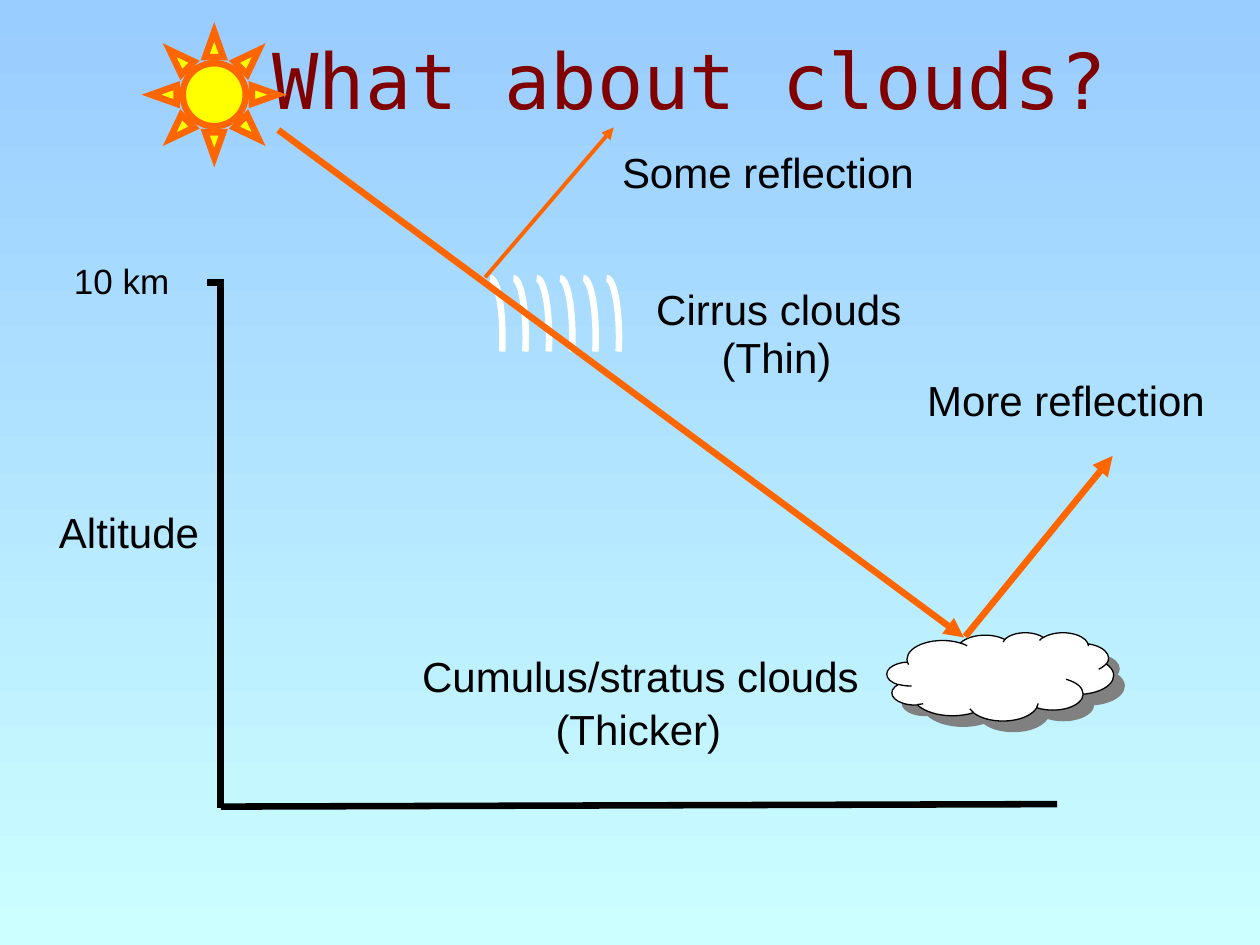
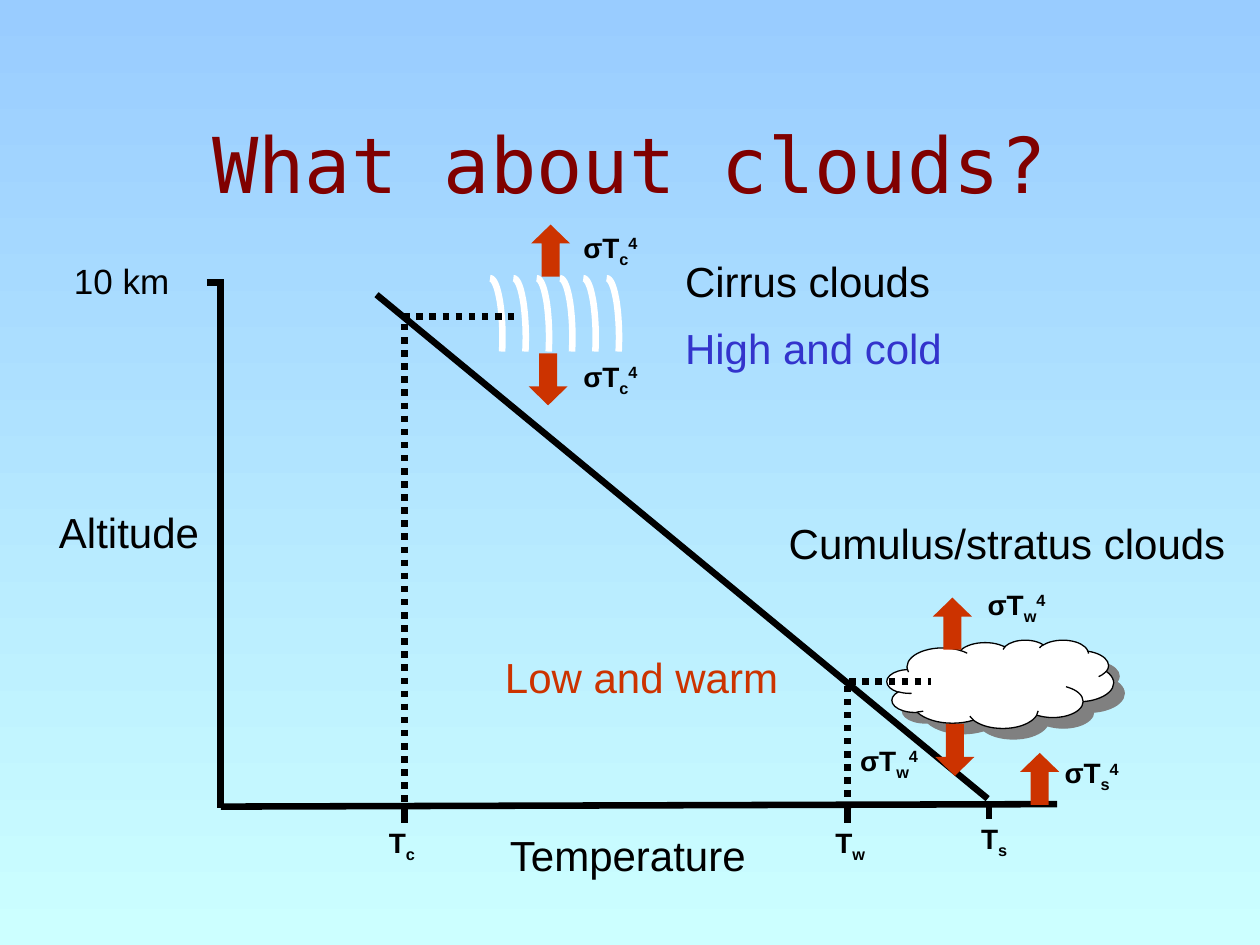
from math import cos, radians, sin

from lxml import etree
from pptx import Presentation
from pptx.dml.color import RGBColor
from pptx.enum.dml import MSO_LINE
from pptx.enum.shapes import MSO_CONNECTOR, MSO_SHAPE
from pptx.enum.text import MSO_ANCHOR, MSO_AUTO_SIZE, PP_ALIGN
from pptx.oxml.ns import qn
from pptx.util import Cm, Pt

SKY = RGBColor(0x99, 0xCC, 0xFF)
AQUA = RGBColor(0xCC, 0xFF, 0xFF)
BLACK = RGBColor(0, 0, 0)
WHITE = RGBColor(0xFF, 0xFF, 0xFF)
MAROON = RGBColor(0x80, 0, 0)
ORANGE = RGBColor(0xFF, 0x66, 0)
YELLOW = RGBColor(0xFF, 0xFF, 0)
RED = RGBColor(0xCC, 0x33, 0)
BLUE = RGBColor(0x33, 0x33, 0xCC)

DOTS = MSO_LINE.ROUND_DOT
LINE = MSO_CONNECTOR.STRAIGHT
CLOUD, SUN = MSO_SHAPE.CLOUD, MSO_SHAPE.SUN
UP, DOWN = MSO_SHAPE.UP_ARROW, MSO_SHAPE.DOWN_ARROW
MIDDLE, CENTER, LEFT = MSO_ANCHOR.MIDDLE, PP_ALIGN.CENTER, PP_ALIGN.LEFT
FIT, FIXED = MSO_AUTO_SIZE.SHAPE_TO_FIT_TEXT, MSO_AUTO_SIZE.NONE

TITLE = "What about clouds?"
THICK = 3.75

AXES = [(4.45, 5.72, 4.45, 16.28), (4.45, 16.26, 21.31, 16.21),
        (4.17, 5.69, 4.52, 5.69)]

NOTES = [
    ("Cumulus/stratus clouds", 8.26, 12.98, 9.32),
    ("Cirrus clouds", 12.98, 5.59, 5.46),
    ("(Thin)", 14.3, 6.55, 2.72),
    ("(Thicker)", 10.95, 14.05, 3.86),
    ("Some reflection", 12.29, 2.82, 6.4),
    ("More reflection", 18.44, 7.42, 6.12),
]
RAYS = [
    (5.61, 2.62, 19.43, 12.85, THICK),
    (9.78, 5.59, 12.37, 2.57, 2.25),
    (19.46, 12.83, 22.43, 9.19, THICK),
]

SLOPE = (19.91, 16.1, 7.59, 5.94)
GUIDES = [(17.12, 13.74, 18.77, 13.74), (17.09, 13.82, 17.09, 16.08),
          (8.13, 6.38, 10.36, 6.38), (8.15, 6.53, 8.15, 16.26)]
TICKS = [(19.94, 16.15), (17.09, 16.23), (8.15, 16.23)]
TEMPS = [("s", 19.53, 16.43, 1.1), ("w", 16.59, 16.51, 1.2),
         ("c", 7.59, 16.51, 1.1)]
ARROWS = [(UP, 20.73, 15.27), (UP, 18.97, 12.14), (UP, 10.87, 4.62),
          (DOWN, 19.02, 14.66), (DOWN, 10.82, 7.19)]
FLUXES = [("s", 21.21, 15.11, 1.65), ("w", 19.66, 11.71, 1.76),
          ("w", 17.09, 14.86, 1.76), ("c", 11.51, 4.52, 1.65),
          ("c", 11.51, 7.12, 1.65)]


def text(page, rows, x, y, w, h=1.27, size=24, font="Arial", color=BLACK,
         bold=False, align=LEFT, wrap=False, anchor=None, gap=0):
    box = page.shapes.add_textbox(Cm(x), Cm(y), Cm(w), Cm(h))
    frame = box.text_frame
    frame.word_wrap = wrap
    frame.auto_size = FIXED if wrap else FIT
    if anchor is not None:
        frame.vertical_anchor = anchor
    if isinstance(rows, str):
        rows = [[(rows, 0, color)]]
    for i, row in enumerate(rows):
        para = frame.add_paragraph() if i else frame.paragraphs[0]
        para.alignment = align
        para.space_before = Pt(gap if i else 0)
        for words, base, tint in row:
            run = para.add_run()
            run.text = words
            run.font.name = font
            run.font.size = Pt(size)
            run.font.bold = bold
            run.font.color.rgb = tint
            if base:
                run._r.get_or_add_rPr().set("baseline", str(base * 1000))


def line(page, x1, y1, x2, y2, width=THICK, color=BLACK, dash=None, head=False):
    rod = page.shapes.add_connector(LINE, Cm(x1), Cm(y1), Cm(x2), Cm(y2))
    rod.line.color.rgb = color
    rod.line.width = Pt(width)
    if dash:
        rod.line.dash_style = dash
    if head:
        etree.SubElement(rod.line._get_or_add_ln(), qn("a:tailEnd"), type="triangle")
    etree.SubElement(rod._element.spPr, qn("a:effectLst"))


def shape(page, kind, x, y, w, h, fill, edge, width=THICK, adjust=()):
    item = page.shapes.add_shape(kind, Cm(x), Cm(y), Cm(w), Cm(h))
    item.shadow.inherit = False
    item.fill.solid()
    item.fill.fore_color.rgb = fill
    item.line.color.rgb = edge
    item.line.width = Pt(width)
    etree.SubElement(item.line._get_or_add_ln(), qn("a:miter"), lim="800000")
    for i, value in enumerate(adjust):
        item.adjustments[i] = value
    return item


def cumulus(page, y):
    cloud = shape(page, CLOUD, 17.88, y, 4.57, 1.78, WHITE, BLACK, 0.75)
    effects = cloud._element.spPr.find(qn("a:effectLst"))
    shade = etree.SubElement(effects, qn("a:outerShdw"), dist=str(Pt(8.5)),
                             dir="2700000", algn="ctr", rotWithShape="0")
    etree.SubElement(shade, qn("a:srgbClr"), val="808080")


def cirrus(page):
    for i in range(6):
        left = 9.88 + 0.47 * i
        curve = [(Cm(left + 0.25 * cos(radians(a))), Cm(6.8 + 1.19 * sin(radians(a))))
                 for a in range(-90, 15, 4)]
        pen = page.shapes.build_freeform(*curve[0])
        pen.add_line_segments(curve[1:], close=False)
        wisp = pen.convert_to_shape()
        wisp.shadow.inherit = False
        wisp.fill.background()
        wisp.line.color.rgb = WHITE
        wisp.line.width = Pt(THICK)


def base(deck, x, y):
    page = deck.slides.add_slide(deck.slide_layouts[6])
    fill = page.background.fill
    fill.gradient()
    fill.gradient_angle = 270
    for stop, color in zip(fill.gradient_stops, (SKY, AQUA)):
        stop.color.rgb = color
    text(page, TITLE, x, y, 21.59, 3.18, size=44, font="DejaVu Sans Mono",
         color=MAROON, align=CENTER, wrap=True, anchor=MIDDLE)
    for ends in AXES:
        line(page, *ends)
    text(page, "Altitude", 0.94, 10.08, 3.33)
    text(page, "10 km", 1.24, 5.11, 2.44, 1.09, size=20)
    return page


def reflect(deck):
    page = base(deck, 3.12, 0)
    cumulus(page, 12.75)
    cirrus(page)
    shape(page, SUN, 3.05, 0.64, 2.54, 2.54, YELLOW, ORANGE, adjust=[0.25])
    for ray in RAYS:
        line(page, *ray, color=ORANGE, head=True)
    for note in NOTES:
        text(page, *note)


def emit(deck):
    page = base(deck, 1.9, 1.7)
    line(page, *SLOPE)
    cumulus(page, 12.9)
    cirrus(page)
    text(page, "Temperature", 10.03, 16.59, 5.36)
    text(page, "Low and warm", 9.93, 13, 6.02, color=RED)
    text(page, "Cumulus/stratus clouds", 15.65, 10.31, 9.32)
    text(page, [[("Cirrus clouds", 0, BLACK)], [("High and cold", 0, BLUE)]],
         13.56, 5.03, 5.69, 2.62, gap=9.5)
    for guide in GUIDES:
        line(page, *guide, dash=DOTS)
    for x, y in TICKS:
        line(page, x, y, x, y + 0.37)
    for kind, x, y in ARROWS:
        shape(page, kind, x, y, 0.46, 0.89, RED, RED, adjust=[0.5, 0.485])
    for sub, x, y, w in TEMPS:
        text(page, [[("T", 0, BLACK), (sub, -25, BLACK)]],
             x, y, w, 0.94, size=16, bold=True)
    for sub, x, y, w in FLUXES:
        text(page, [[("σT", 0, BLACK), (sub, -25, BLACK), ("4", 30, BLACK)]],
             x, y, w, 0.94, size=16, bold=True)


def main():
    deck = Presentation()
    deck.slide_width, deck.slide_height = Cm(25.4), Cm(19.05)
    reflect(deck)
    emit(deck)
    deck.save("out.pptx")


if __name__ == "__main__":
    main()
